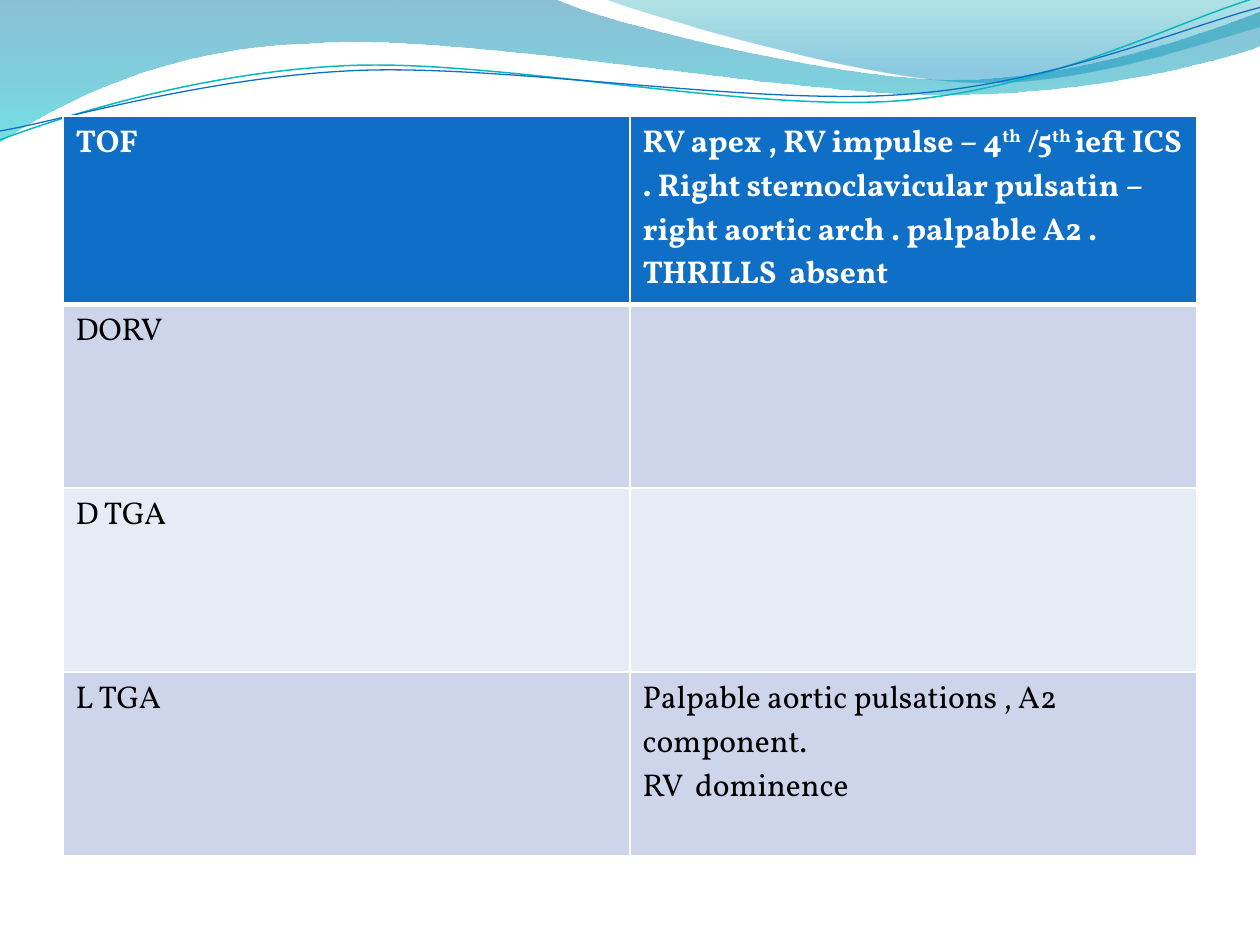
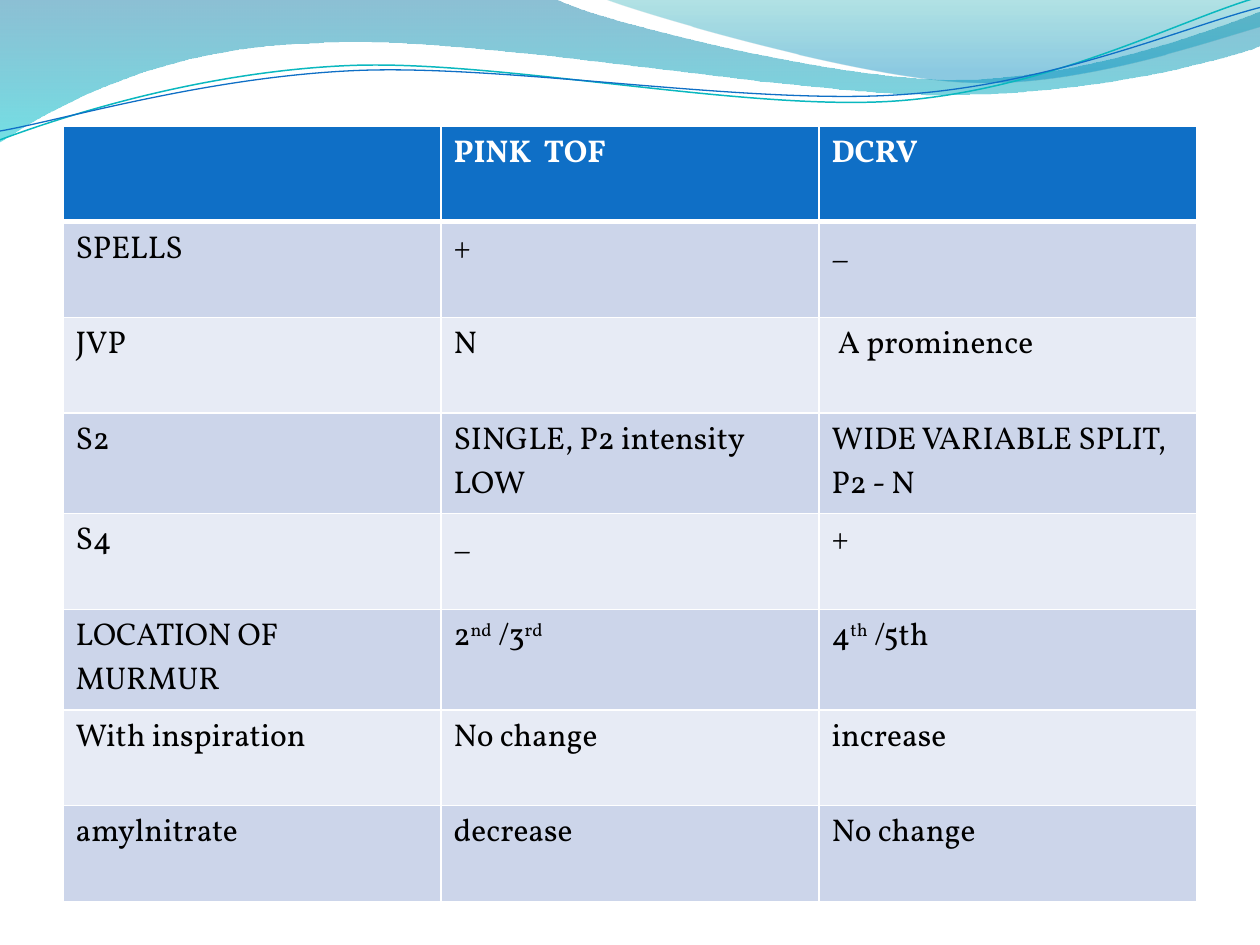
"""Build two slides of heart-defect tables under a shared wave band."""
from math import cos, radians, sin

from lxml import etree
from pptx import Presentation
from pptx.dml.color import RGBColor
from pptx.oxml import parse_xml
from pptx.oxml.ns import nsdecls, qn
from pptx.util import Emu, Inches, Pt

FONT, FONT_SIZE = "Vollkorn", 18
WHITE, BLACK, BLUE = "FFFFFF", "000000", "0F6FC6"
ROW_TINTS = ("CCD5EA", "E7EBF5")
SIDE_MARGIN = 0.5
LINE_TILT = 2.7

TABLES = [
    {"top": 0.92, "row_height": 1.46, "rows": [
        ("TOF", "RV apex , RV impulse – 4^th^ /5^th ^ieft ICS . Right sternoclavicular "
                "pulsatin – right aortic arch . palpable A2 .\nTHRILLS  absent"),
        ("DORV", ""),
        ("D TGA", ""),
        ("L TGA", "Palpable aortic pulsations , A2 component.\nRV  dominence"),
    ]},
    {"top": 1, "row_height": 0.76, "rows": [
        ("", "PINK  TOF", "DCRV"),
        ("SPELLS", "+", "_"),
        ("JVP", "N", " A prominence"),
        ("S2", "SINGLE, P2 intensity LOW", "WIDE VARIABLE SPLIT, P2 - N"),
        ("S4", "_", "+"),
        ("LOCATION OF MURMUR", "2^nd^ /3^rd^", "4^th^ /5th"),
        ("With inspiration", "No change", "increase"),
        ("amylnitrate", "decrease", "No change"),
    ]},
]

WAVES = [
    {"stops": [(0, "0074A1", 45), (1, "00C6CF", 55)], "path": [
        (0, 0), (4.4, -0.01),
        ((4.76, 0.17), (6.64, 0.63), (7.58, 0.63)),
        ((8.53, 0.63), (9.58, 0.26), (10, 0.09)),
        (10.01, 0.36),
        ((9.83, 0.44), (8.7, 0.76), (7.46, 0.75)),
        ((6.22, 0.75), (3.82, 0.28), (2.57, 0.34)),
        ((1.29, 0.36), (0.46, 0.83), (-0.01, 1.13)),
        (0, 0)]},
    {"stops": [(0, "00A1A9", 30), (0.8, "008BBF", 45)], "path": [
        (4.79, -0.01),
        ((5.09, 0.11), (6.82, 0.62), (7.69, 0.65)),
        ((8.56, 0.69), (9.61, 0.32), (10, 0.21)),
        (10, 0), (4.79, -0.01)]},
    {"line": ("0AB8BF", 0.85), "pivot": (4.99, 0.58), "path": [
        (0, 1.11),
        ((0.48, 0.93), (1.58, 0.57), (2.77, 0.52)),
        ((3.95, 0.47), (5.93, 0.89), (7.13, 0.8)),
        ((8.33, 0.71), (9.38, 0.15), (9.98, -0.02))]},
    {"line": (BLUE, 0.75), "pivot": (5, 0.59), "path": [
        (0, 1.04),
        ((0.47, 0.96), (1.64, 0.61), (2.83, 0.56)),
        ((4.03, 0.51), (5.97, 0.84), (7.17, 0.75)),
        ((8.36, 0.67), (9.41, 0.21), (10, 0.06))]},
]


def rgb(hex_color):
    return RGBColor.from_string(hex_color)


def turn(point, pivot, degrees):
    angle = radians(degrees)
    x, y = point[0] - pivot[0], point[1] - pivot[1]
    return (pivot[0] + x * cos(angle) - y * sin(angle),
            pivot[1] + x * sin(angle) + y * cos(angle))


def draw_path(slide, path, tilt, pivot, closed):
    steps = [step if isinstance(step[0], tuple) else (step,) for step in path]
    start, *rest = [tuple(Inches(v) for v in turn(point, pivot, tilt))
                    for step in steps for point in step]
    builder = slide.shapes.build_freeform(*start)
    builder.add_line_segments(rest, close=closed)
    outline = builder.convert_to_shape()
    outline.rotation = -tilt
    segments = iter(list(outline._element.iter(qn("a:lnTo"))))
    for step in steps[1:]:
        group = [next(segments) for _ in step]
        if len(group) == 3:
            curve = group[0]
            curve.addprevious(bezier := etree.Element(qn("a:cubicBezTo")))
            for segment in group:
                bezier.append(segment[0])
                segment.getparent().remove(segment)
    return outline


def add_wave(slide, wave):
    is_line = "line" in wave
    outline = draw_path(slide, wave["path"], LINE_TILT if is_line else 0,
                        wave.get("pivot", (0, 0)), closed=not is_line)
    outline.shadow.inherit = False
    if is_line:
        color, width = wave["line"]
        outline.fill.background()
        outline.line.color.rgb = rgb(color)
        outline.line.width = Pt(width)
        return
    outline.line.fill.background()
    outline.fill.gradient()
    outline.fill.gradient_angle = 270
    for stop, (position, color, _) in zip(outline.fill.gradient_stops, wave["stops"]):
        stop.position = position
        stop.color.rgb = rgb(color)
    tints = outline._element.spPr.find(qn("a:gradFill")).iter(qn("a:srgbClr"))
    for tint, (_, _, opacity) in zip(tints, wave["stops"]):
        etree.SubElement(tint, qn("a:alpha")).set("val", str(opacity * 1000))


def set_borders(cell, top, bottom):
    widths = {"L": 1, "R": 1, "T": top, "B": bottom}
    for place, (side, width) in enumerate(widths.items()):
        cell._tc.get_or_add_tcPr().insert(place, parse_xml(
            f'<a:ln{side} {nsdecls("a")} w="{Pt(width)}"><a:solidFill>'
            f'<a:srgbClr val="{WHITE}"/></a:solidFill></a:ln{side}>'))


def write_cell(cell, text, is_header):
    for i, line in enumerate(text.split("\n")):
        paragraph = cell.text_frame.add_paragraph() if i else cell.text_frame.paragraphs[0]
        font = paragraph.font
        font.name, font.size, font.bold = FONT, Pt(FONT_SIZE), is_header
        font.color.rgb = rgb(WHITE if is_header else BLACK)
        for j, part in enumerate(line.split("^")):
            if part:
                run = paragraph.add_run()
                run.text = part
                if j % 2:
                    run._r.get_or_add_rPr().set("baseline", "30000")


def add_grid(slide, slide_width, content):
    rows = content["rows"]
    row_height = Inches(content["row_height"])
    width = slide_width - 2 * Inches(SIDE_MARGIN)
    grid = slide.shapes.add_table(len(rows), len(rows[0]), Inches(SIDE_MARGIN),
                                  Inches(content["top"]), Emu(width),
                                  Emu(row_height * len(rows))).table
    grid.first_row = grid.horz_banding = False
    for r, texts in enumerate(rows):
        grid.rows[r].height = row_height
        for c, text in enumerate(texts):
            cell = grid.cell(r, c)
            cell.fill.solid()
            cell.fill.fore_color.rgb = rgb(ROW_TINTS[(r - 1) % 2] if r else BLUE)
            set_borders(cell, top=3 if r == 1 else 1, bottom=1 if r else 3)
            write_cell(cell, text, is_header=r == 0)


def main():
    deck = Presentation()
    deck.slide_width, deck.slide_height = Inches(10), Inches(7.5)
    for content in TABLES:
        slide = deck.slides.add_slide(deck.slide_layouts[6])
        for wave in WAVES:
            add_wave(slide, wave)
        add_grid(slide, deck.slide_width, content)
    deck.save("out.pptx")


if __name__ == "__main__":
    main()
